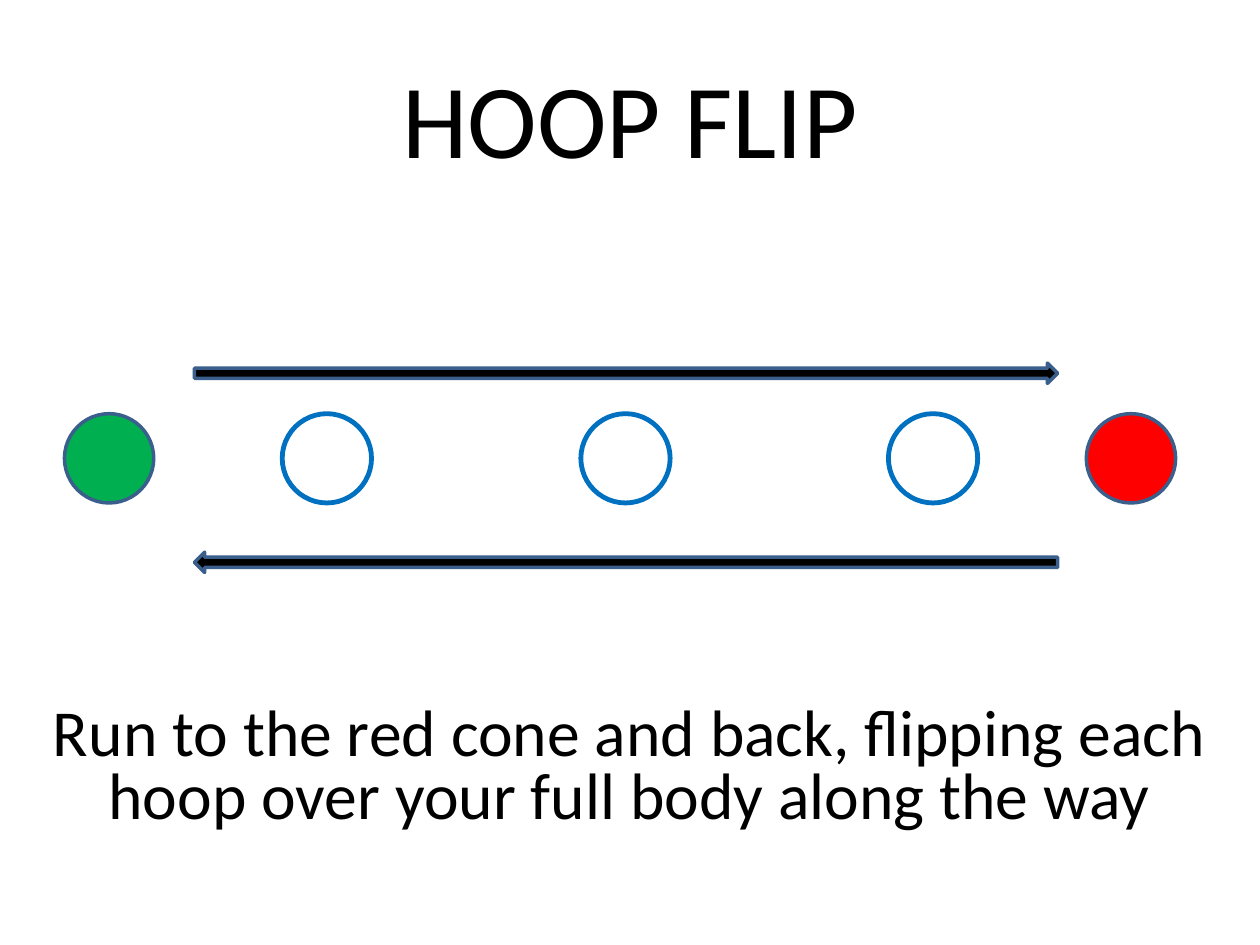
from dataclasses import dataclass

from pptx import Presentation
from pptx.dml.color import RGBColor
from pptx.enum.shapes import MSO_SHAPE
from pptx.enum.text import MSO_ANCHOR, PP_ALIGN
from pptx.util import Cm, Pt


@dataclass(frozen=True)
class Theme:
    font: str = "Calibri"
    ink: RGBColor = RGBColor(0x00, 0x00, 0x00)
    start: RGBColor = RGBColor(0x00, 0xB0, 0x50)
    finish: RGBColor = RGBColor(0xFF, 0x00, 0x00)
    outline: RGBColor = RGBColor(0x3A, 0x5F, 0x8C)
    hoop: RGBColor = RGBColor(0x00, 0x70, 0xC0)
    title_size: float = 60
    body_size: float = 37.5
    outline_width: float = 2
    hoop_width: float = 2.75


THEME = Theme()


def add_caption(slide, box, wording, size, line_spacing=1.0):
    """Centred text that fills the given box (left, top, width, height in cm)."""
    frame = slide.shapes.add_textbox(*map(Cm, box)).text_frame
    frame.word_wrap = True
    frame.vertical_anchor = MSO_ANCHOR.MIDDLE
    paragraph = frame.paragraphs[0]
    paragraph.alignment = PP_ALIGN.CENTER
    paragraph.line_spacing = line_spacing
    run = paragraph.add_run()
    run.text = wording
    font_format = {"name": THEME.font, "size": Pt(size)}
    for attribute, setting in font_format.items():
        setattr(run.font, attribute, setting)
    run.font.color.rgb = THEME.ink


def add_marker(slide, preset, box, fill, outline, outline_width):
    """Outlined shape, hollow when fill is None."""
    marker = slide.shapes.add_shape(preset, *map(Cm, box))
    marker.shadow.inherit = False
    if fill is None:
        marker.fill.background()
    else:
        marker.fill.solid()
        marker.fill.fore_color.rgb = fill
    marker.line.color.rgb = outline
    marker.line.width = Pt(outline_width)
    return marker


def add_course(slide, box):
    """Cones at both ends, hoops between them, a run arrow above and below."""
    left, top, width, height = box
    diameter = 1.8
    arrow_inset, arrow_height = 2.62, 0.41
    circle_top = top + 1.02

    # Start and finish cones
    for offset, colour in ((0, THEME.start), (width - diameter, THEME.finish)):
        add_marker(slide, MSO_SHAPE.OVAL,
                   (left + offset, circle_top, diameter, diameter),
                   colour, THEME.outline, THEME.outline_width)

    # Arrows out and back
    for offset, rotation in ((0, 0), (height - arrow_height, 180)):
        arrow = add_marker(slide, MSO_SHAPE.RIGHT_ARROW,
                           (left + arrow_inset, top + offset, 17.4, arrow_height),
                           THEME.ink, THEME.outline, THEME.outline_width)
        arrow.rotation = rotation

    # Hoops
    for offset in (4.39, 10.41, 16.61):
        add_marker(slide, MSO_SHAPE.OVAL,
                   (left + offset, circle_top, diameter, diameter),
                   None, THEME.hoop, THEME.hoop_width)


def main():
    deck = Presentation()
    deck.slide_width, deck.slide_height = Cm(25.4), Cm(19.05)
    slide = deck.slides.add_slide(deck.slide_layouts[6])

    add_caption(slide, (1.27, 0.76, 22.86, 3.18), "HOOP FLIP", THEME.title_size)
    add_course(slide, (1.3, 7.32, 22.4, 4.22))
    add_caption(slide, (0, 13.92, 25.4, 3.18),
                "Run to the red cone and back, flipping each hoop "
                "over your full body along the way",
                THEME.body_size, line_spacing=0.8)

    deck.save("out.pptx")


if __name__ == "__main__":
    main()
